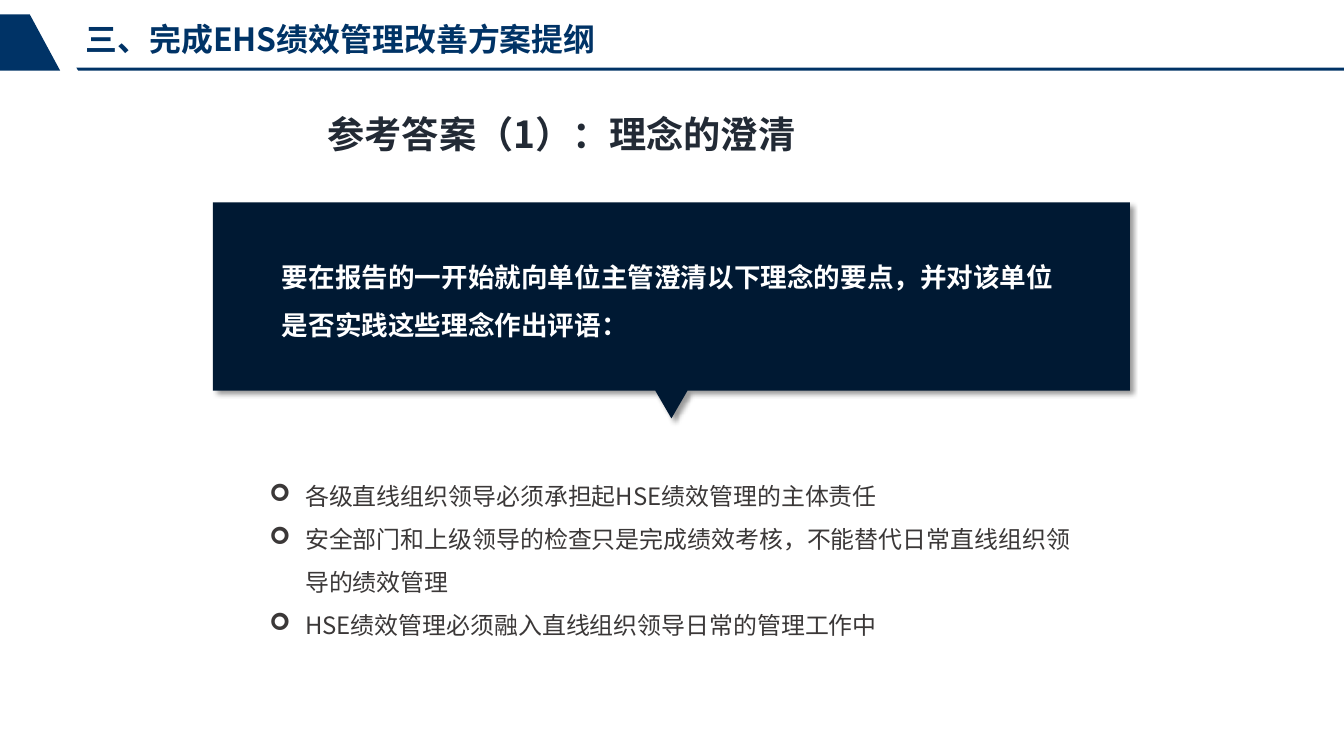
import pptx
import pptx.dml.color
import pptx.enum.text
import pptx.oxml
import pptx.oxml.ns
import pptx.util

Cm = pptx.util.Cm
FACE = "Noto Sans CJK SC"
NAVY = "003366"
INK = "001933"
GREY = "3B3838"
WIDE, HIGH = 35.71, 20.09
POINTS = [
    "各级直线组织领导必须承担起HSE绩效管理的主体责任",
    "安全部门和上级领导的检查只是完成绩效考核，不能替代日常直线组织领导的绩效管理",
    "HSE绩效管理必须融入直线组织领导日常的管理工作中",
]


def color(code):
    """Turn a hex string into a colour."""
    return pptx.dml.color.RGBColor.from_string(code)


def add_xml(parent, text):
    """Append a DrawingML fragment to an element."""
    space = pptx.oxml.ns.nsdecls("a")
    parent.append(pptx.oxml.parse_xml(text.replace(" ", f" {space} ", 1)))


def draw(slide, box, spots, code):
    """Draw a filled outline from spots relative to the box corner."""
    left, top = box[:2]
    edge = [(Cm(left + x), Cm(top + y)) for x, y in spots]
    pen = slide.shapes.build_freeform(*edge[0])
    pen.add_line_segments(edge[1:], close=True)
    shape = pen.convert_to_shape()
    shape.shadow.inherit = False
    shape.fill.solid()
    shape.fill.fore_color.rgb = color(code)
    shape.line.fill.background()
    return shape


def write(slide, box, lines, size, code, bold=True, gap=1.0):
    """Write paragraphs in a text box and return them."""
    frame = slide.shapes.add_textbox(*map(Cm, box)).text_frame
    form = {"word_wrap": True, "auto_size": pptx.enum.text.MSO_AUTO_SIZE.SHAPE_TO_FIT_TEXT}
    for key, value in form.items():
        setattr(frame, key, value)
    frame.text = "\n".join(lines)
    style = {"name": FACE, "size": pptx.util.Pt(size), "bold": bold}
    for para in frame.paragraphs:
        para.line_spacing = gap
        for run in para.runs:
            for key, value in style.items():
                setattr(run.font, key, value)
            run.font.color.rgb = color(code)
            add_xml(run.font._element, f'<a:ea typeface="{FACE}"/>')
    return frame.paragraphs


def header(slide, box):
    """Place the corner tab, the rule and the section title."""
    left, top, width, height = box
    draw(slide, box, [(0.79, 0), (1.6, height), (0, height), (0, 0)], NAVY)
    rule = [(2.03, height - 0.08), (width, height - 0.08), (width, height), (2.08, height)]
    draw(slide, box, rule, NAVY)
    write(slide, (left + 2.03, top + 0.03, 22.43, 1.27), ["三、完成EHS绩效管理改善方案提纲"], 24, NAVY)


def callout(slide, box):
    """Place the dark panel with its pointer, shadow and message."""
    left, top, width, height = box
    mid = width / 2
    spots = [(0, 0), (width, 0), (width, height), (mid + 0.43, height),
             (mid, height + 0.74), (mid - 0.43, height), (0, height)]
    shape = draw(slide, box, spots, INK)
    effect = shape._element.spPr.find(pptx.oxml.ns.qn("a:effectLst"))
    add_xml(effect, '<a:outerShdw blurRad="50800" dist="38100" dir="2700000" algn="tl">'
            '<a:srgbClr val="000000"><a:alpha val="40000"/></a:srgbClr></a:outerShdw>')
    text = "要在报告的一开始就向单位主管澄清以下理念的要点，并对该单位是否实践这些理念作出评语："
    write(slide, (left + 1.58, top + 1, 21.21, 2.82), [text], 20, "FFFFFF", gap=1.5)


def bullets(slide, box):
    """Place the list of key points with arrow bullets."""
    for para in write(slide, box, POINTS, 18, GREY, False, 1.5):
        props = para._p.get_or_add_pPr()
        for key, value in {"marL": Cm(0.95), "indent": -Cm(0.95)}.items():
            props.set(key, str(value))
        add_xml(props, f'<a:buClr ><a:srgbClr val="{GREY}"/></a:buClr>')
        add_xml(props, '<a:buFont typeface="Wingdings"/>')
        add_xml(props, '<a:buChar char="➢"/>')


def main():
    """Build the slide and save it."""
    deck = pptx.Presentation()
    for key, value in {"slide_width": WIDE, "slide_height": HIGH}.items():
        setattr(deck, key, Cm(value))
    slide = deck.slides.add_slide(deck.slide_layouts[6])
    header(slide, (0, 0.38, WIDE, 1.5))
    write(slide, (8.46, 2.84, 19.89, 1.45), ["参考答案（1）：理念的澄清"], 28, "222A35")
    callout(slide, (5.66, 5.38, 24.36, 5))
    bullets(slide, (6.91, 12.29, 21.87, 4.72))
    deck.save("out.pptx")


if __name__ == "__main__":
    main()
